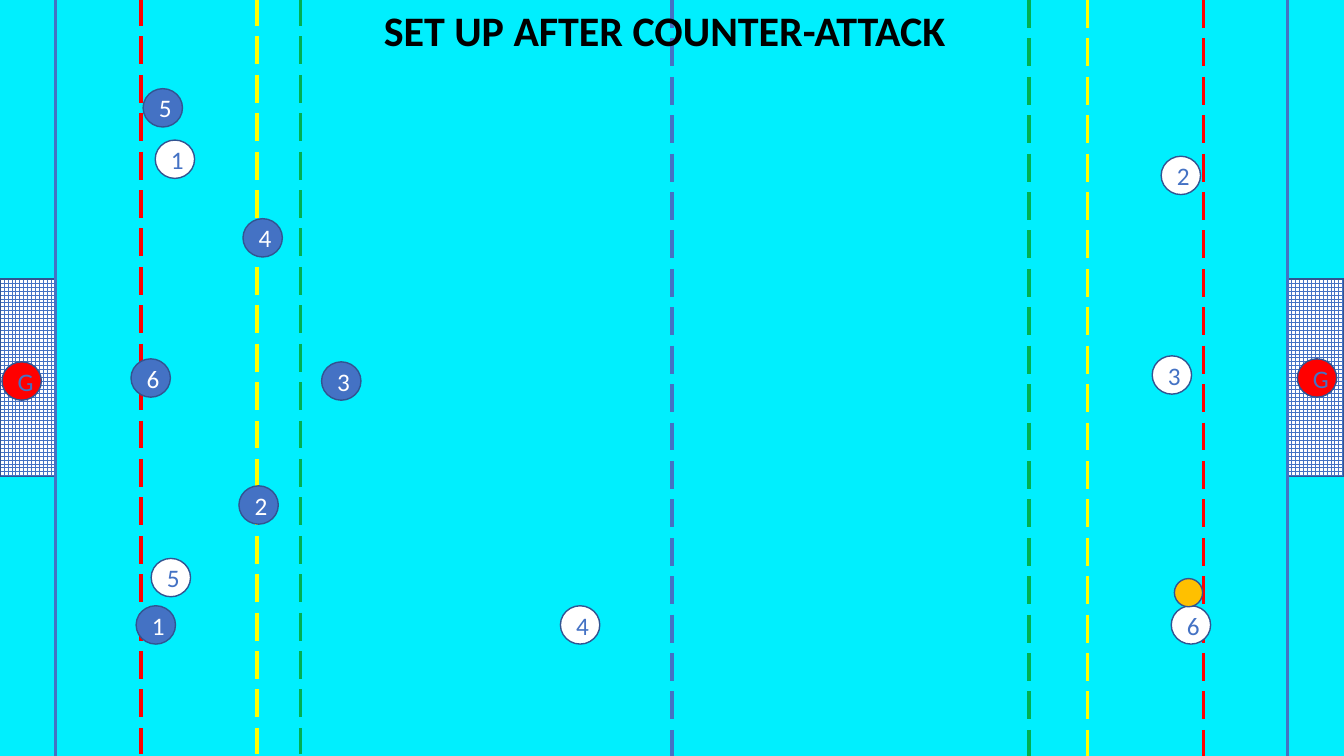
from lxml.etree import SubElement
from pptx import Presentation
from pptx.dml.color import RGBColor
from pptx.enum.dml import MSO_LINE, MSO_PATTERN
from pptx.enum.shapes import MSO_CONNECTOR, MSO_SHAPE
from pptx.enum.text import MSO_AUTO_SIZE, PP_ALIGN
from pptx.oxml.ns import qn
from pptx.util import Inches, Pt

HEX = {"water": "00EFFE", "blue": "4472C4", "edge": "325491", "white": "FFFFFF",
       "red": "FF0000", "yellow": "FFFF00", "green": "00B050", "ball": "FFC000",
       "black": "000000"}
RGB = {name: RGBColor.from_string(code) for name, code in HEX.items()}

deck = Presentation()
deck.slide_width, deck.slide_height = Inches(13.33), Inches(7.5)
slide = deck.slides.add_slide(deck.slide_layouts[6])
slide.background.fill.solid()
slide.background.fill.fore_color.rgb = RGB["water"]


def box(x, y, w, h):
    """Turn percent of the slide's width and height into lengths."""
    wide, high = deck.slide_width / 100, deck.slide_height / 100
    return [int(x * wide), int(y * high), int(w * wide), int(h * high)]


def mark(kind, place, fill=None):
    """Add an outlined shape, solid if a fill is named."""
    shape = slide.shapes.add_shape(kind, *box(*place))
    shape.shadow.inherit = False
    shape.line.color.rgb = RGB["edge"]
    shape.line.width = Pt(1)
    if fill:
        shape.fill.solid()
        shape.fill.fore_color.rgb = RGB[fill]
    return shape


# Goals
for x in (0, 95.8):
    goal = mark(MSO_SHAPE.RECTANGLE, (x, 36.93, 4.2, 26.13))
    goal.fill.patterned()
    goal.fill.pattern = MSO_PATTERN.LARGE_GRID
    goal.fill.fore_color.rgb = RGB["blue"]
    goal.fill.back_color.rgb = RGB["white"]

# Pool lines: across, top, colour, dashed
lines = [(50, 0, "blue", True),
         (19.13, -0.27, "yellow", True), (22.35, -0.27, "green", True),
         (10.5, -0.27, "red", True), (76.58, 0, "green", True),
         (80.93, 0, "yellow", True), (89.55, 0, "red", True),
         (4.13, 0, "blue", False), (95.78, 0, "blue", False)]
for x, top, color, dashed in lines:
    left, start, _, high = box(x, top, 0, 100)
    line = slide.shapes.add_connector(MSO_CONNECTOR.STRAIGHT,
                                      left, start, left, start + high)
    line.line.color.rgb = RGB[color]
    line.line.width = Pt(2.5)
    if dashed:
        line.line.dash_style = MSO_LINE.LONG_DASH
    SubElement(line._element.spPr, qn("a:effectLst"))

# Players: fill, text colour, then cap with its place
teams = [
    ("blue", "white", [("6", 9.75, 47.47), ("5", 10.65, 11.73), ("1", 10.13, 80.13),
                       ("4", 18.08, 28.93), ("3", 23.93, 47.87), ("2", 17.78, 64.27)]),
    ("white", "blue", [("2", 86.4, 20.67), ("1", 11.55, 18.53), ("3", 85.73, 47.07),
                       ("5", 11.25, 73.87), ("4", 41.7, 80.13), ("6", 87.15, 80.13)]),
    ("red", "blue", [("G", 0.15, 47.87), ("G", 96.53, 47.47)]),
]
labels = []
for fill, ink, squad in teams:
    for cap, x, y in squad:
        player = mark(MSO_SHAPE.OVAL, (x, y, 2.93, 5.07), fill)
        labels.append((player, cap, 18, ink, False))

# Ball
mark(MSO_SHAPE.OVAL, (87.38, 76.53, 2.1, 3.73), "ball")

# Title
title = slide.shapes.add_textbox(*box(25.88, 0, 47.18, 8.13))
title.text_frame.word_wrap = True
title.text_frame.auto_size = MSO_AUTO_SIZE.SHAPE_TO_FIT_TEXT
labels.append((title, "SET UP AFTER COUNTER-ATTACK", 30, "black", True))

# Text of caps and title
for shape, words, size, ink, bold in labels:
    para = shape.text_frame.paragraphs[0]
    para.alignment = PP_ALIGN.CENTER
    run = para.add_run()
    run.text = words
    run.font.name = "Calibri"
    run.font.size = Pt(size)
    run.font.bold = bold
    run.font.color.rgb = RGB[ink]

deck.save("out.pptx")
